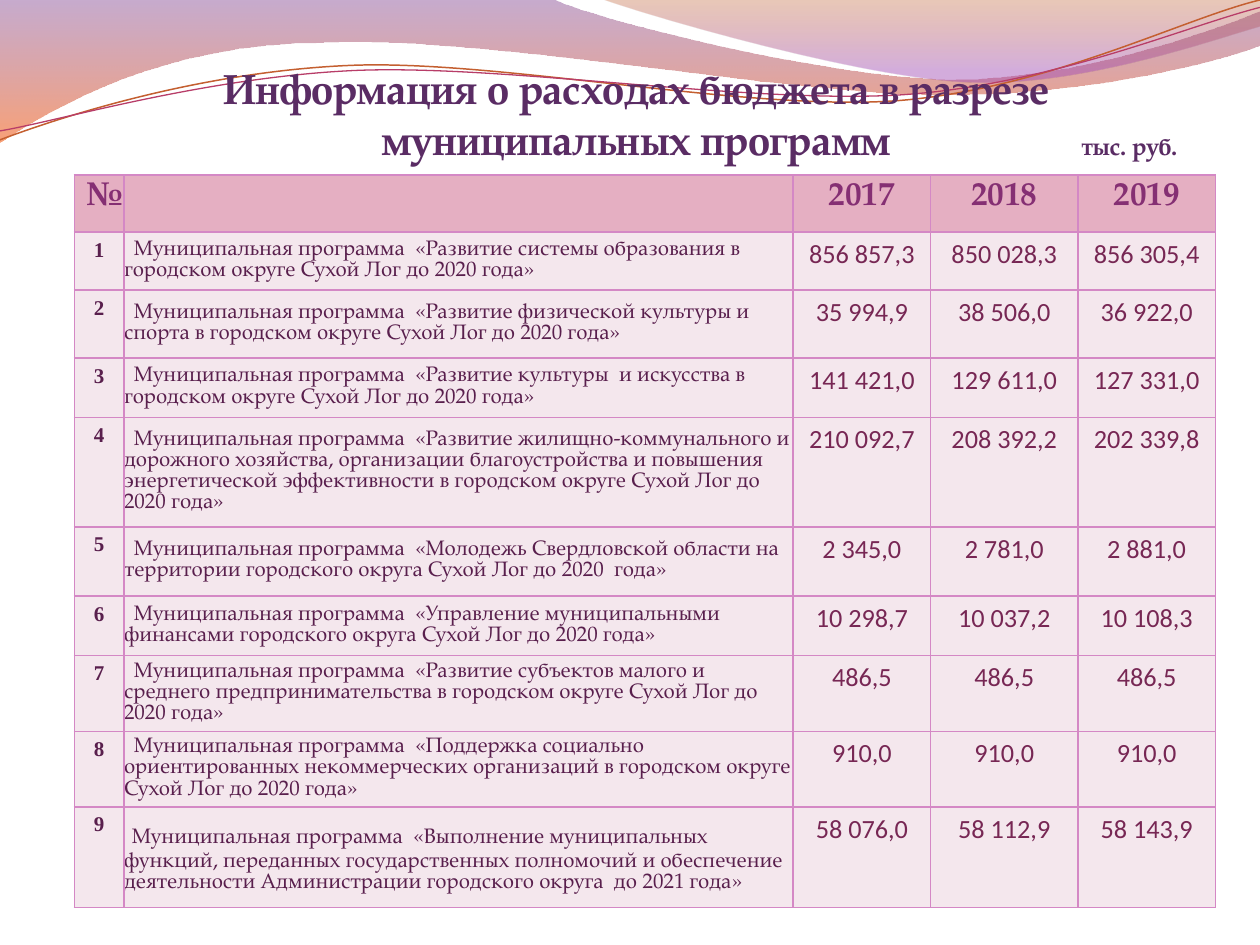
from dataclasses import dataclass

from lxml import etree
from pptx import Presentation
from pptx import util as u
from pptx.dml import color
from pptx.enum import text
from pptx.oxml import ns


@dataclass(frozen=True)
class Theme:
    serif: str = "TeX Gyre Pagella"
    number_serif: str = "Times New Roman"
    sans: str = "Calibri"
    title_color: str = "5A2C64"
    header_color: str = "852F73"
    body_color: str = "591F4D"
    amount_color: str = "772754"
    header_fill: str = "E5AFC2"
    body_fill: str = "F4E7ED"
    border: str = "D488C5"
    title_size: int = 24
    unit_size: int = 14
    header_size: int = 19
    body_size: int = 12
    lead_size: int = 18
    amount_size: int = 15
    wide_wave: tuple = ((0, "834591", 45), (1, "F35307", 55))
    right_wave: tuple = ((0, "B74915", 30), (0.8, "A14BB4", 45))
    upper_line: tuple = ("C45F30", 0.85)
    lower_line: tuple = ("B83D68", 0.75)


THEME = Theme()

WIDE_WAVE = [
    (0, 0), (11.18, 0),
    (12.09, 0.43, 16.87, 1.6, 19.25, 1.6),
    (21.67, 1.6, 24.33, 0.66, 25.4, 0.23),
    (25.4, 0.91),
    (24.97, 1.12, 22.1, 1.93, 18.95, 1.91),
    (15.8, 1.91, 9.7, 0.71, 6.53, 0.86),
    (3.28, 0.89, 1.17, 2.11, 0, 2.87),
]
RIGHT_WAVE = [
    (12.17, 0),
    (12.93, 0.28, 17.32, 1.57, 19.53, 1.65),
    (21.74, 1.75, 24.41, 0.81, 25.4, 0.53),
    (25.4, 0),
]
UPPER_LINE = [
    (0, 2.82),
    (1.22, 2.36, 4.01, 1.45, 7.04, 1.32),
    (10.03, 1.19, 15.06, 2.26, 18.11, 2.03),
    (21.16, 1.78, 23.83, 0.38, 25.4, 0),
]
LOWER_LINE = [
    (0, 2.64),
    (1.19, 2.44, 4.17, 1.55, 7.19, 1.42),
    (10.24, 1.3, 15.16, 2.11, 18.21, 1.91),
    (21.23, 1.7, 23.9, 0.53, 25.4, 0.15),
]

HEADERS = ["№", "", "2017", "2018", "2019"]
COLUMN_WIDTHS = [1, 13.49, 2.77, 2.97, 2.77]
HEADER_HEIGHT = 1.15
PROGRAMS = [
    (1.17, "Развитие системы образования в городском округе Сухой Лог до 2020 года",
     "856 857,3", "850 028,3", "856 305,4"),
    (1.37, "Развитие физической культуры и спорта в городском округе Сухой Лог до 2020 года",
     "35 994,9", "38 506,0", "36 922,0"),
    (1.2, "Развитие культуры  и искусства в городском округе Сухой Лог до 2020 года",
     "141 421,0", "129 611,0", "127 331,0"),
    (2.2, "Развитие жилищно-коммунального и дорожного хозяйства, организации "
          "благоустройства и повышения энергетической эффективности в городском "
          "округе Сухой Лог до 2020 года",
     "210 092,7", "208 392,2", "202 339,8"),
    (1.4, "Молодежь Свердловской области на территории городского округа "
          "Сухой Лог до 2020  года",
     "2 345,0", "2 781,0", "2 881,0"),
    (1.2, "Управление муниципальными финансами городского округа Сухой Лог до 2020 года",
     "10 298,7", "10 037,2", "10 108,3"),
    (1.2, "Развитие субъектов малого и среднего предпринимательства в городском "
          "округе Сухой Лог до 2020 года",
     "486,5", "486,5", "486,5"),
    (1.2, "Поддержка социально ориентированных некоммерческих организаций в "
          "городском округе Сухой Лог до 2020 года",
     "910,0", "910,0", "910,0"),
    (2.03, "Выполнение муниципальных функций, переданных государственных полномочий "
           "и обеспечение деятельности Администрации городского округа  до 2021 года",
     "58 076,0", "58 112,9", "58 143,9"),
]


def rgb(value):
    return color.RGBColor.from_string(value)


def assign(target, values):
    for name, value in values.items():
        setattr(target, name, value)


def write_line(para, words, font, size, ink, bold=False, align=text.PP_ALIGN.CENTER):
    para.alignment = align
    span = para.add_run()
    span.text = words
    assign(span.font, {"name": font, "size": u.Pt(size), "bold": bold})
    span.font.color.rgb = rgb(ink)


def bend(outline, segments):
    steps = list(outline._element.iter(ns.qn("a:lnTo")))
    for segment in segments[1:]:
        count = len(segment) // 2
        corners, steps = steps[:count], steps[count:]
        if count == 3:
            curve = etree.Element(ns.qn("a:cubicBezTo"))
            corners[0].addprevious(curve)
            for corner in corners:
                curve.append(corner[0])
                corner.getparent().remove(corner)


def add_outline(page, segments, close):
    points = [(u.Cm(segment[i]), u.Cm(segment[i + 1]))
              for segment in segments for i in range(0, len(segment), 2)]
    builder = page.shapes.build_freeform(*points[0])
    builder.add_line_segments(points[1:], close=close)
    outline = builder.convert_to_shape()
    bend(outline, segments)
    outline.shadow.inherit = False
    return outline


def add_wave(page, segments, stops):
    wave = add_outline(page, segments, True)
    wave.line.fill.background()
    wave.fill.gradient()
    wave.fill.gradient_angle = 270
    for stop, (position, ink, _) in zip(wave.fill.gradient_stops, stops):
        stop.position = position
        stop.color.rgb = rgb(ink)
    for ink, (_, _, opacity) in zip(wave._element.iter(ns.qn("a:srgbClr")), stops):
        etree.SubElement(ink, ns.qn("a:alpha"), val=str(opacity * 1000))


def add_curve(page, segments, style):
    ink, width = style
    curve = add_outline(page, segments, False)
    curve.fill.background()
    curve.line.color.rgb = rgb(ink)
    curve.line.width = u.Pt(width)


def add_label(page, place, lines, size):
    box = page.shapes.add_textbox(*map(u.Cm, place))
    frame = box.text_frame
    assign(frame, {"word_wrap": True, "vertical_anchor": text.MSO_ANCHOR.BOTTOM,
                   "margin_left": 0, "margin_right": 0, "margin_top": u.Cm(0.13),
                   "margin_bottom": 0})
    for index, words in enumerate(lines):
        para = frame.add_paragraph() if index else frame.paragraphs[0]
        write_line(para, words, THEME.serif, size, THEME.title_color, True)


def style_cell(cell, fill):
    cell.fill.solid()
    cell.fill.fore_color.rgb = rgb(fill)
    properties = cell._tc.get_or_add_tcPr()
    for index, side in enumerate(("lnL", "lnR", "lnT", "lnB")):
        edge = etree.Element(ns.qn(f"a:{side}"), w=str(u.Pt(1)))
        solid = etree.SubElement(edge, ns.qn("a:solidFill"))
        etree.SubElement(solid, ns.qn("a:srgbClr"), val=THEME.border)
        properties.insert(index, edge)


def write_program(cell, name, tall_lead):
    assign(cell, {"vertical_anchor": text.MSO_ANCHOR.MIDDLE, "margin_left": 0,
                  "margin_right": 0, "margin_top": 0, "margin_bottom": 0})
    para = cell.text_frame.paragraphs[0]
    left = text.PP_ALIGN.LEFT
    if tall_lead:
        write_line(para, " ", THEME.serif, THEME.lead_size, THEME.body_color, align=left)
    else:
        para._p.get_or_add_pPr().set("indent", str(u.Cm(0.2)))
    write_line(para, f"Муниципальная программа  «{name}»", THEME.serif,
               THEME.body_size, THEME.body_color, align=left)


def add_budget_table(page):
    heights = [HEADER_HEIGHT] + [program[0] for program in PROGRAMS]
    place = (1.5, 3.53, sum(COLUMN_WIDTHS), sum(heights))
    table = page.shapes.add_table(len(heights), len(COLUMN_WIDTHS), *map(u.Cm, place)).table
    assign(table, {"first_row": False, "horz_banding": False})
    for column, width in zip(table.columns, COLUMN_WIDTHS):
        column.width = u.Cm(width)
    for row, height in zip(table.rows, heights):
        row.height = u.Cm(height)
    for cell, words in zip(table.rows[0].cells, HEADERS):
        style_cell(cell, THEME.header_fill)
        if words:
            write_line(cell.text_frame.paragraphs[0], words, THEME.serif,
                       THEME.header_size, THEME.header_color, True)
    for number, (_, name, *amounts) in enumerate(PROGRAMS, 1):
        cells = list(table.rows[number].cells)
        for cell in cells:
            style_cell(cell, THEME.body_fill)
        write_line(cells[0].text_frame.paragraphs[0], str(number), THEME.number_serif,
                   THEME.body_size, THEME.body_color, True)
        write_program(cells[1], name, number == len(PROGRAMS))
        for cell, amount in zip(cells[2:], amounts):
            write_line(cell.text_frame.paragraphs[0], amount, THEME.sans,
                       THEME.amount_size, THEME.amount_color)


def main():
    deck = Presentation()
    assign(deck, {"slide_width": u.Cm(25.4), "slide_height": u.Cm(19.05)})
    page = deck.slides.add_slide(deck.slide_layouts[6])
    add_wave(page, WIDE_WAVE, THEME.wide_wave)
    add_wave(page, RIGHT_WAVE, THEME.right_wave)
    add_curve(page, UPPER_LINE, THEME.upper_line)
    add_curve(page, LOWER_LINE, THEME.lower_line)
    add_label(page, (1.3, 1.32, 23.06, 1.98),
              ["Информация о расходах бюджета в разрезе", "муниципальных программ"],
              THEME.title_size)
    add_label(page, (21.57, 2.24, 2.4, 1), ["тыс. руб."], THEME.unit_size)
    add_budget_table(page)
    deck.save("out.pptx")


if __name__ == "__main__":
    main()
